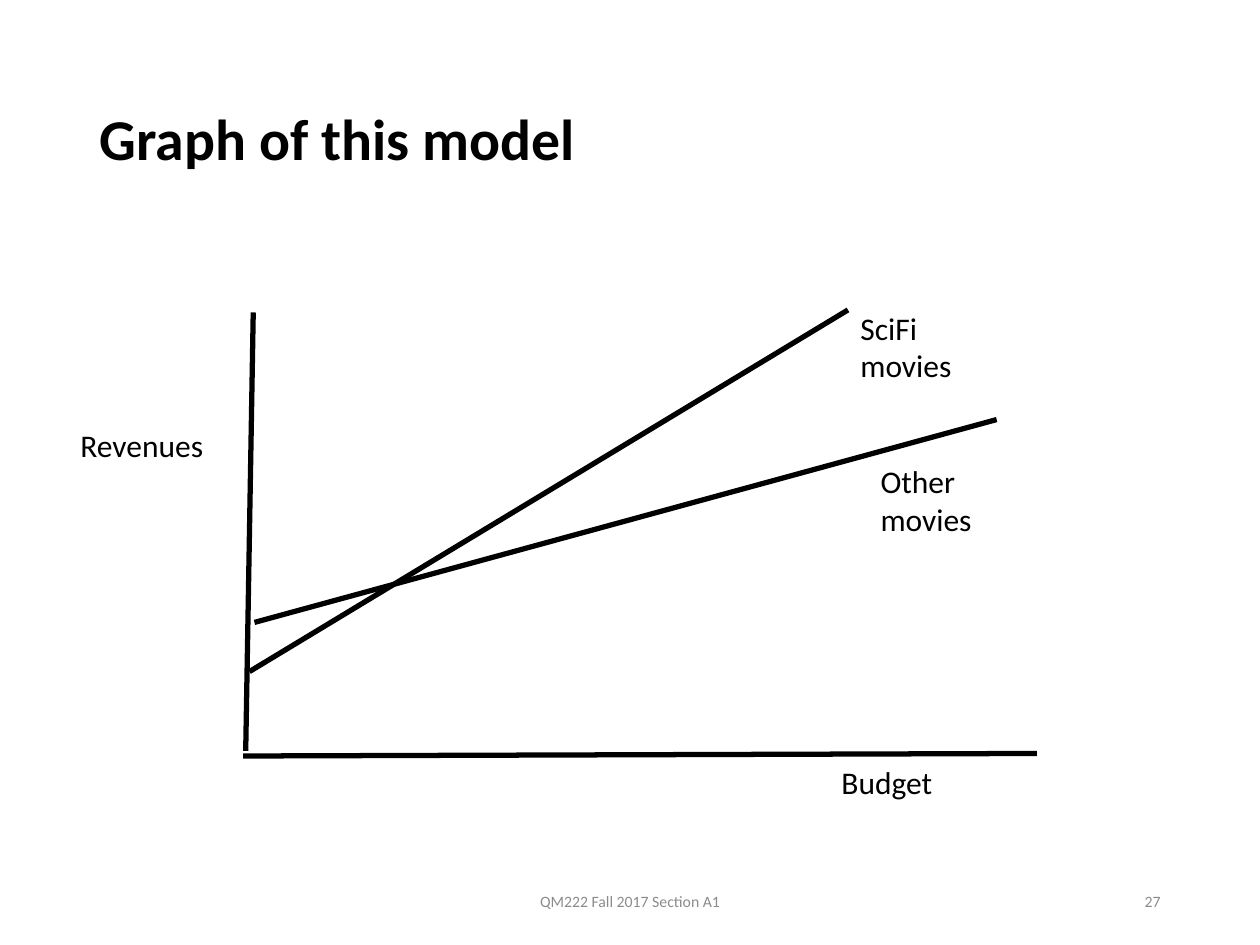
"""Build a slide that graphs revenues against budget for two kinds of movies."""
from lxml.etree import SubElement
from pptx import Presentation
from pptx.dml.color import RGBColor
from pptx.enum.shapes import MSO_CONNECTOR as Connector
from pptx.enum.text import MSO_ANCHOR as Anchor, PP_ALIGN as Align
from pptx.oxml.ns import qn
from pptx.util import Inches, Pt

COLORS = {"ink": "000000", "footer": "8C8C8C"}

presentation = Presentation()
presentation.slide_width = Inches(10)
presentation.slide_height = Inches(7.5)
column = presentation.slide_width / 10
row = presentation.slide_height / 7.5
slide = presentation.slides.add_slide(presentation.slide_layouts[5])


def place(*cells):
    return [round(cell * unit) for cell, unit in zip(cells, (column, row) * 2)]


def write(shape, text, size, color, align=Align.LEFT, anchor=Anchor.TOP):
    frame = shape.text_frame
    frame.word_wrap = True
    frame.vertical_anchor = anchor
    paragraph = frame.paragraphs[0]
    paragraph.text = text
    paragraph.alignment = align
    paragraph.font.name = "Calibri"
    paragraph.font.size = Pt(size)
    paragraph.font.color.rgb = RGBColor.from_string(COLORS[color])
    return paragraph


title = slide.shapes.title
title.left, title.top, title.width, title.height = place(0.69, 0.4, 8.62, 1.45)
heading = write(title, "Graph of this model", 33, "ink", anchor=Anchor.MIDDLE)
heading.font.bold = True
heading.line_spacing = 0.9

footers = [
    ("QM222 Fall 2017 Section A1", 3.31, 3.38, Align.CENTER),
    ("27", 7.06, 2.25, Align.RIGHT),
]
for text, left, width, align in footers:
    box = slide.shapes.add_textbox(*place(left, 6.95, width, 0.4))
    write(box, text, 9, "footer", align, Anchor.MIDDLE)

scifi_line = (6.73, 2.46, 1.98, 5.33)
revenues_axis = (2.01, 2.48, 1.95, 5.96)
other_line = (7.91, 3.33, 2.02, 4.94)
budget_axis = (8.23, 5.98, 1.93, 6)
for ends in (scifi_line, revenues_axis, other_line, budget_axis):
    line = slide.shapes.add_connector(Connector.STRAIGHT, *place(*ends))
    line.line.width = Pt(3)
    line.line.color.rgb = RGBColor.from_string(COLORS["ink"])
    SubElement(line._element.spPr, qn("a:effectLst"))

labels = [
    ("Budget", 6.58, 6.01, 1.21),
    ("Revenues", 0.54, 3.33, 1.29),
    ("SciFi movies", 6.73, 2.4, 1.38),
    ("Other movies", 6.89, 3.62, 1.47),
]
for text, left, top, width in labels:
    box = slide.shapes.add_textbox(*place(left, top, width, 0.35))
    write(box, text, 18, "ink")

presentation.save("out.pptx")
